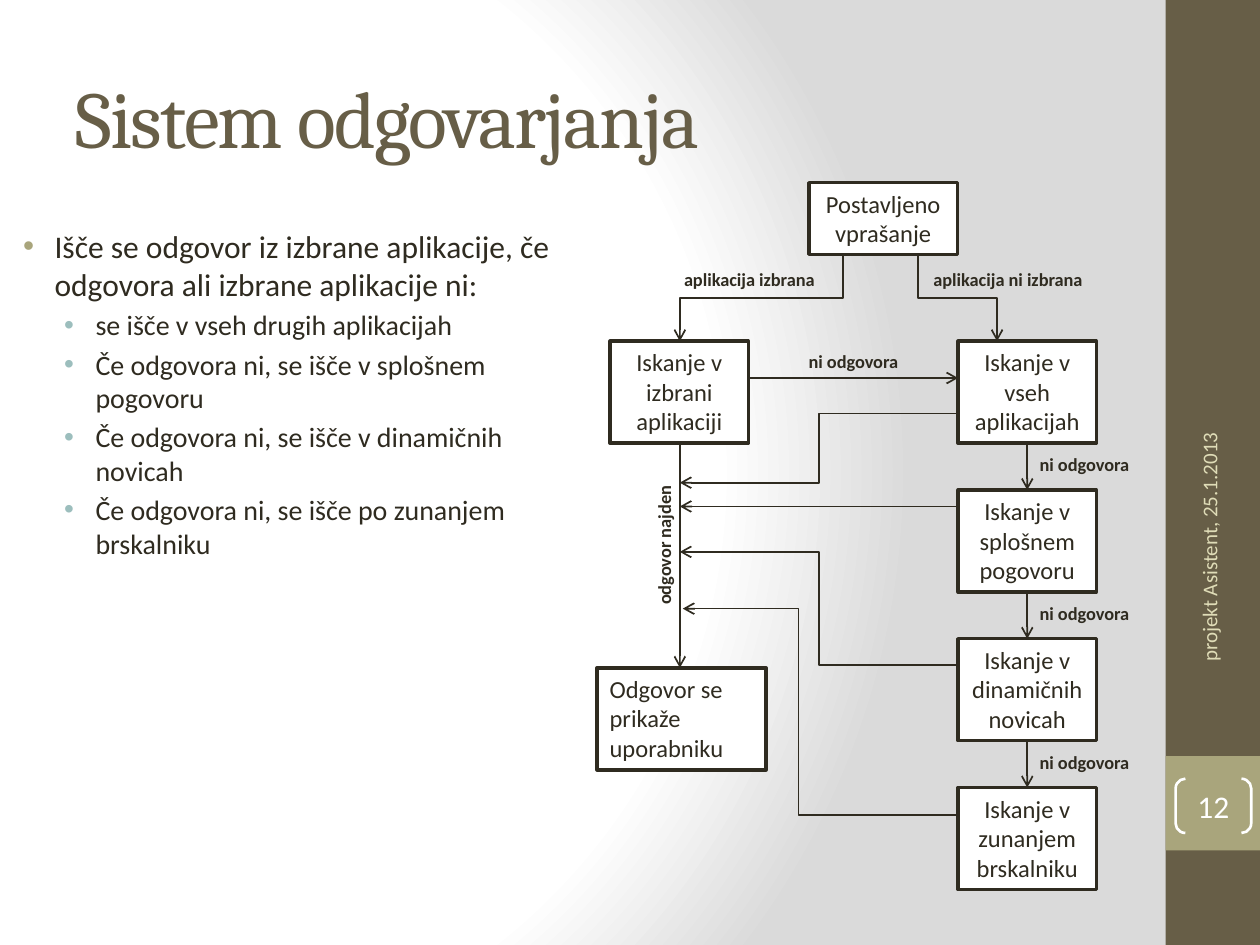
from pptx import Presentation
from pptx.dml.color import RGBColor
from pptx.enum import shapes, text
from pptx.oxml import parse_xml
from pptx.oxml.ns import nsdecls, qn
from pptx.util import Pt
from lxml import etree

C = dict(ink="2F2B20", brown="675E47", olive="A9A57C", teal="9CBEBD",
         cream="DFDCB7", white="FFFFFF", grey="DADADA")
SHAPE, LINE = shapes.MSO_SHAPE, shapes.MSO_CONNECTOR
LEFT, CENTER, RIGHT = text.PP_ALIGN.LEFT, text.PP_ALIGN.CENTER, text.PP_ALIGN.RIGHT
TOP, MIDDLE = text.MSO_ANCHOR.TOP, text.MSO_ANCHOR.MIDDLE

TITLE = "Sistem odgovarjanja"
BULLETS = [
    (0, "Išče se odgovor iz izbrane aplikacije, če odgovora ali izbrane aplikacije ni:"),
    (1, "se išče v vseh drugih aplikacijah"),
    (1, "Če odgovora ni, se išče v splošnem pogovoru"),
    (1, "Če odgovora ni, se išče v dinamičnih novicah"),
    (1, "Če odgovora ni, se išče po zunanjem brskalniku"),
]
LEVELS = [dict(size=18, color="olive", indent=27), dict(size=16, color="teal", indent=50.4)]
FOOTER, PAGE = "projekt Asistent, 25.1.2013", "12"

# Search steps stand in one column at equal distances
STEPS = ["Iskanje v vseh aplikacijah", "Iskanje v splošnem pogovoru",
         "Iskanje v dinamičnih novicah", "Iskanje v zunanjem brskalniku"]
STEP_X, STEP_Y, STEP_W, STEP_H, PITCH = 547.5, 195, 79, 58.3, 85
STEP_MID = STEP_X + STEP_W / 2
FOUND_X = 388.5

BOXES = [
    ("Postavljeno vprašanje", (462.2, 104.4, 85, 41), CENTER),
    ("Iskanje v izbrani aplikaciji", (348.7, STEP_Y, STEP_W, STEP_H), CENTER),
    ("Odgovor se prikaže uporabniku", (341.3, 381.6, 96.5, STEP_H), LEFT),
] + [(s, (STEP_X, STEP_Y + i * PITCH, STEP_W, STEP_H), CENTER) for i, s in enumerate(STEPS)]

LABELS = [
    ("ni odgovora", (455, 196.6, 67, 20), 0),
    ("aplikacija ni izbrana", (526.3, 149.8, 101.5, 20), 0),
    ("aplikacija izbrana", (383.8, 149.8, 90.7, 20), 0),
    ("odgovor najden", (337.7, 301, 83.5, 20), 270),
] + [("ni odgovora", (STEP_MID, 255.6 + i * PITCH, 67, 20), 0) for i in range(3)]

STRAIGHT = [
    (FOUND_X, 253.3, FOUND_X, 381.6),
    (427.7, 216, STEP_X, 216),
    (STEP_X, 289.4, FOUND_X, 289.4),
] + [(STEP_MID, STEP_Y + STEP_H + i * PITCH, STEP_MID, STEP_Y + (i + 1) * PITCH)
     for i in range(3)]
BRANCHES = [(481.7, 145.4, FOUND_X, STEP_Y), (524.5, 145.4, 569.7, STEP_Y)]
RETURNS = [  # start y, end y, end x, share of the way to the bend
    (236.2, 275.8, FOUND_X, 0.5),
    (380.2, 315.4, FOUND_X, 0.5),
    (465.8, 347.8, 390.2, 0.58),
]

prs = Presentation()
prs.slide_width, prs.slide_height = Pt(720), Pt(540)
slide = prs.slides.add_slide(prs.slide_layouts[6])


def rgb(name):
    return RGBColor.from_string(C[name])


def paint_background():
    stops = "".join(f'<a:gs pos="{pos * 1000}"><a:srgbClr val="{C[name]}"/></a:gs>'
                    for pos, name in [(0, "white"), (75, "white"), (100, "grey")])
    slide._element.cSld.insert(0, parse_xml(
        f'<p:bg {nsdecls("p", "a")}><p:bgPr><a:gradFill rotWithShape="1">'
        f'<a:gsLst>{stops}</a:gsLst><a:path path="circle">'
        '<a:fillToRect l="20000" t="50000" r="100000" b="50000"/></a:path>'
        '</a:gradFill><a:effectLst/></p:bgPr></p:bg>'))


def write(p, words, size=14, color="ink", font="Calibri", bold=False, align=LEFT):
    p.alignment = align
    r = p.add_run()
    r.text = words
    f = r.font
    f.size, f.name, f.bold = Pt(size), font, bold
    f.color.rgb = rgb(color)
    return r


def add_text(words, box, anchor=TOP, wrap=True, rotation=0, **fmt):
    sp = slide.shapes.add_textbox(*map(Pt, box))
    sp.rotation = rotation
    tf = sp.text_frame
    tf.word_wrap, tf.vertical_anchor = wrap, anchor
    if not wrap:
        tf.auto_size = text.MSO_AUTO_SIZE.SHAPE_TO_FIT_TEXT
    return write(tf.paragraphs[0], words, **fmt)


def add_box(box, kind=SHAPE.RECTANGLE, fill=None, line=None, width=2):
    sp = slide.shapes.add_shape(kind, *map(Pt, box))
    sp.shadow.inherit = False
    if fill:
        sp.fill.solid()
        sp.fill.fore_color.rgb = rgb(fill)
    else:
        sp.fill.background()
    if line:
        sp.line.color.rgb = rgb(line)
        sp.line.width = Pt(width)
    else:
        sp.line.fill.background()
    return sp


def add_arrow(x1, y1, x2, y2, kind=LINE.STRAIGHT, bend=None):
    c = slide.shapes.add_connector(kind, Pt(x1), Pt(y1), Pt(x2), Pt(y2))
    c.line.color.rgb = rgb("ink")
    c.line.width = Pt(1)
    spPr = c._element.spPr
    etree.SubElement(spPr.find(qn("a:ln")), qn("a:tailEnd"), type="arrow")
    etree.SubElement(spPr, qn("a:effectLst"))
    if bend:
        etree.SubElement(spPr.find(".//" + qn("a:avLst")), qn("a:gd"),
                         name="adj1", fmla=f"val {round(bend * 100000)}")
    return c


def add_branch(x1, y1, x2, y2):
    """Elbow that leaves and arrives vertically: a horizontal one, turned about its centre."""
    mx, my = (x1 + x2) / 2, (y1 + y2) / 2
    side = 1 if x2 < x1 else -1
    dx, dy = side * (y2 - y1) / 2, abs(x2 - x1) / 2
    c = add_arrow(mx - dx, my - dy, mx + dx, my + dy, LINE.ELBOW, 0.5)
    c._element.spPr.find(qn("a:xfrm")).set("rot", str((90 if side > 0 else 270) * 60000))


def add_bullets():
    tf = slide.shapes.add_textbox(Pt(-2.9), Pt(126), Pt(334.8), Pt(378)).text_frame
    tf.word_wrap = True
    for i, (level, words) in enumerate(BULLETS):
        look = LEVELS[level]
        p = tf.add_paragraph() if i else tf.paragraphs[0]
        p.level = level
        p.space_before = Pt(look["size"] * 0.2)
        write(p, words, size=look["size"])
        pPr = p._p.get_or_add_pPr()
        pPr.set("marL", str(Pt(look["indent"])))
        pPr.set("indent", str(Pt(-18)))
        color = etree.SubElement(pPr, qn("a:buClr"))
        etree.SubElement(color, qn("a:srgbClr"), val=C[look["color"]])
        etree.SubElement(pPr, qn("a:buFont"), typeface="Arial")
        etree.SubElement(pPr, qn("a:buChar"), char="•")


paint_background()
add_box((666, 0, 54, 540), fill="brown")
add_box((666, 432, 54, 54), fill="olive")
r = add_text(TITLE, (36, 21.6, 600, 90), anchor=MIDDLE, size=46, color="brown", font="Cambria")
r._r.get_or_add_rPr().set("spc", "-100")
add_bullets()
add_text(FOOTER, (597.6, 319, 186.5, 28.8), anchor=MIDDLE, rotation=270,
         size=12, color="cream", align=RIGHT)

sp = add_box((671.8, 445, 43.2, 31), SHAPE.DOUBLE_BRACKET, line="white", width=1.5)
sp.adjustments[0] = 0.18
tf = sp.text_frame
tf.margin_left = tf.margin_right = tf.margin_top = tf.margin_bottom = 0
tf.vertical_anchor = MIDDLE
write(tf.paragraphs[0], PAGE, size=18, color="white", align=CENTER)

for words, box, align in BOXES:
    tf = add_box(box, fill="white", line="ink").text_frame
    tf.word_wrap, tf.vertical_anchor = True, TOP
    write(tf.paragraphs[0], words, align=align)
for ends in STRAIGHT:
    add_arrow(*ends)
for ends in BRANCHES:
    add_branch(*ends)
for y1, y2, x2, bend in RETURNS:
    add_arrow(STEP_X, y1, x2, y2, LINE.ELBOW, bend)
for words, box, rotation in LABELS:
    add_text(words, box, wrap=False, rotation=rotation, size=10.5, bold=True)

prs.save("out.pptx")
